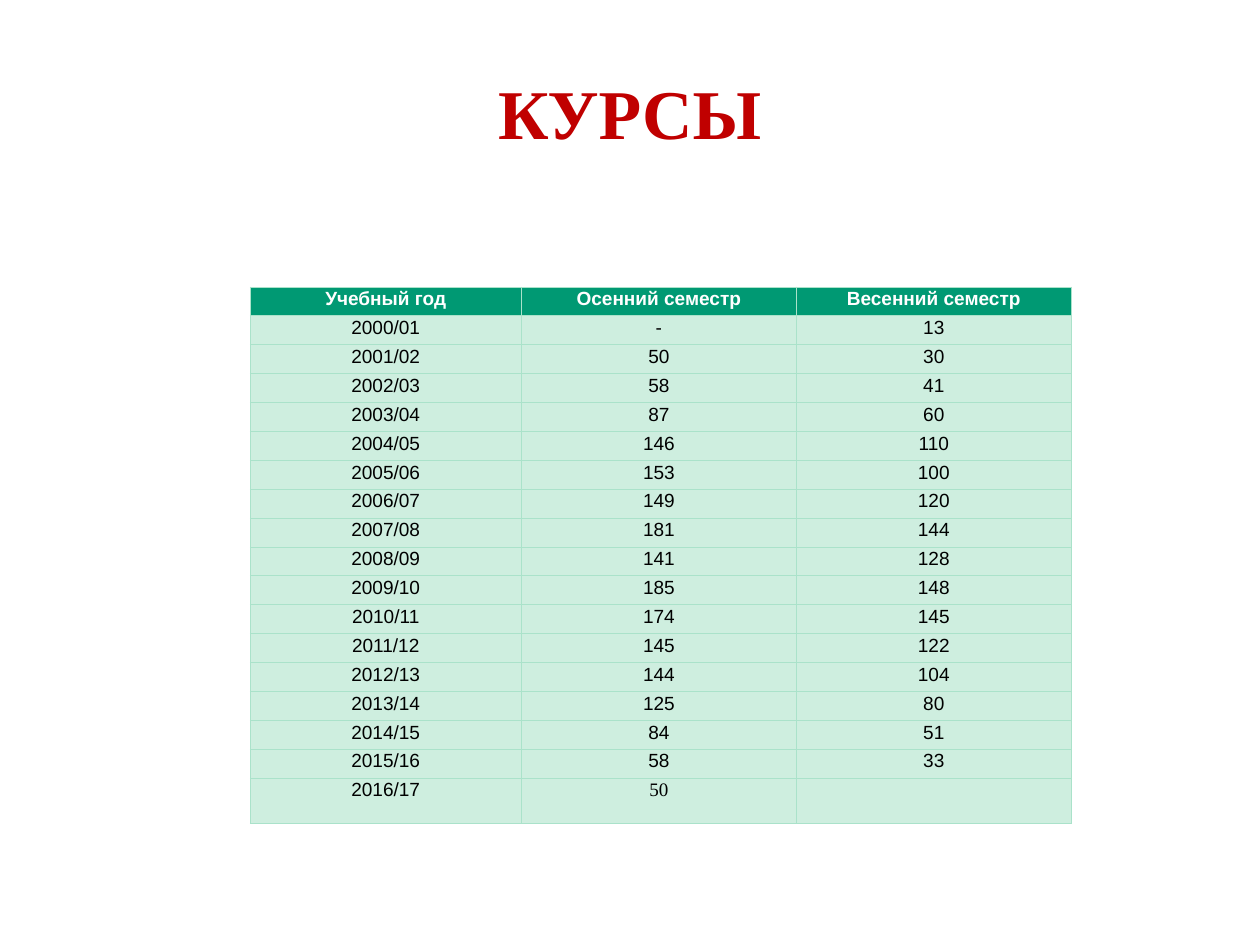
from lxml import etree
from pptx import Presentation
from pptx import util as u
from pptx.dml.color import RGBColor
from pptx.enum import text
from pptx.oxml import ns

COLORS = {
    "title": "C00000",
    "header": "009973",
    "header_text": "FFFFFF",
    "body": "CEEEDF",
    "body_text": "000000",
    "border": "AAE2CA",
}
CM_PER_INCH = 2.54
HEADINGS = ["Учебный год", "Осенний семестр", "Весенний семестр"]
AUTUMN = ["-", 50, 58, 87, 146, 153, 149, 181, 141, 185, 174, 145, 144, 125, 84, 58, 50]
SPRING = [13, 30, 41, 60, 110, 100, 120, 144, 128, 148, 145, 122, 104, 80, 51, 33, ""]
COLUMN_WIDTHS = [2.37, 2.41, 2.4]
LAST_ROW_HEIGHT = 0.4


def style_text(paragraph, font_name, size, color, bold, spacing):
    """Centre a paragraph and format its runs."""
    paragraph.alignment = text.PP_ALIGN.CENTER
    paragraph.line_spacing = spacing
    for run in paragraph.runs:
        run.font.name = font_name
        run.font.size = u.Pt(size)
        run.font.bold = bold
        run.font.color.rgb = RGBColor.from_string(COLORS[color])


def add_borders(cell):
    """Draw a thin line on all four sides of a cell."""
    properties = cell._tc.get_or_add_tcPr()
    for side in ("lnL", "lnR", "lnT", "lnB"):
        line = etree.SubElement(properties, ns.qn(f"a:{side}"), w=str(u.Pt(0.5)))
        fill = etree.SubElement(line, ns.qn("a:solidFill"))
        etree.SubElement(fill, ns.qn("a:srgbClr"), val=COLORS["border"])


def fill_cell(cell, value, part, font_name):
    """Write one table cell in the style of its part."""
    cell.margin_left = cell.margin_right = u.Inches(0.07)
    cell.margin_top = cell.margin_bottom = 0
    add_borders(cell)
    cell.fill.solid()
    cell.fill.fore_color.rgb = RGBColor.from_string(COLORS[part])
    cell.text_frame.text = str(value)
    style_text(cell.text_frame.paragraphs[0], font_name, 12, f"{part}_text", part == "header", 1.07)


def add_heading(slide, left, top, width, height):
    """Place the slide title in its box."""
    heading = slide.shapes.title
    heading.left, heading.top = u.Inches(left), u.Inches(top)
    heading.width, heading.height = u.Inches(width), u.Inches(height)
    frame = heading.text_frame
    frame.margin_left = frame.margin_right = frame.margin_top = frame.margin_bottom = 0
    frame.vertical_anchor = text.MSO_ANCHOR.MIDDLE
    frame.text = "КУРСЫ"
    style_text(frame.paragraphs[0], "Times New Roman", 44, "title", True, 0.93)


def add_courses(slide, left, top, width, height):
    """Build the table of courses by year and semester in its box."""
    years = [f"{2000 + i}/{i + 1:02}" for i in range(len(AUTUMN))]
    records = [HEADINGS, *zip(years, AUTUMN, SPRING)]
    courses = slide.shapes.add_table(
        len(records), len(HEADINGS),
        u.Inches(left), u.Inches(top), u.Inches(width), u.Inches(height),
    ).table
    for column, share in zip(courses.columns, COLUMN_WIDTHS):
        column.width = u.Inches(width * share / sum(COLUMN_WIDTHS))
    last = len(records) - 1
    row_height = (height - LAST_ROW_HEIGHT) / last
    for r, record in enumerate(records):
        courses.rows[r].height = u.Inches(LAST_ROW_HEIGHT if r == last else row_height)
        for c, value in enumerate(record):
            font_name = "Times New Roman" if (r, c) == (last, 1) else "Arial"
            fill_cell(courses.cell(r, c), value, "body" if r else "header", font_name)


def main():
    """Build and save the slide."""
    deck = Presentation()
    deck.slide_width = u.Inches(28 / CM_PER_INCH)
    deck.slide_height = u.Inches(21 / CM_PER_INCH)
    slide = deck.slides.add_slide(deck.slide_layouts[5])
    add_heading(slide, 0.55, 0.33, 9.92, 1.38)
    add_courses(slide, 2.19, 2.51, 7.18, 4.7)
    deck.save("out.pptx")


if __name__ == "__main__":
    main()
